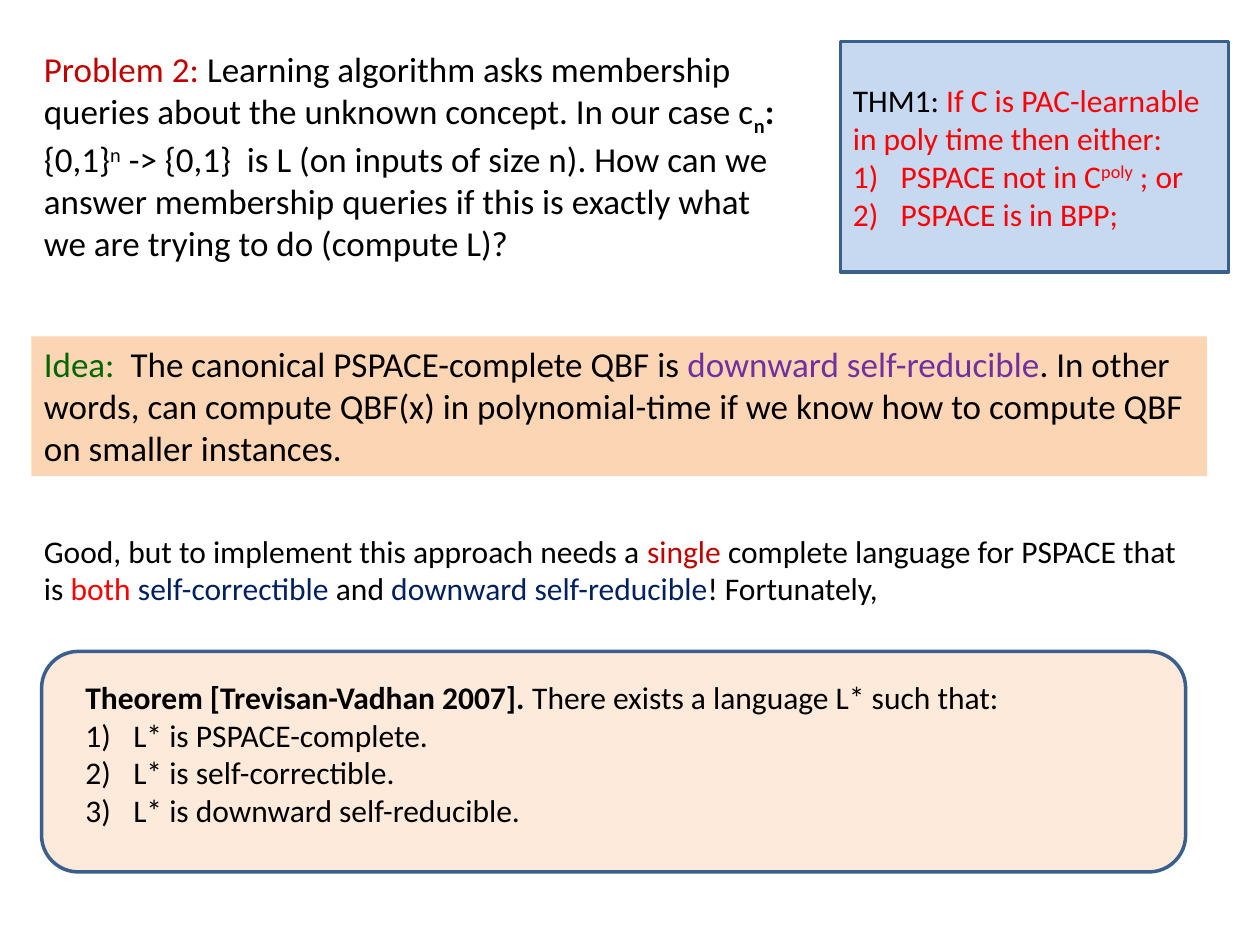
from lxml import etree
from pptx import Presentation
from pptx import util as u
from pptx.dml import color as col
from pptx.enum import shapes, text
from pptx.oxml import ns

HUES = {
    "black": "000000", "green": "006600", "purple": "7030A0", "brick": "C00000",
    "red": "FF0000", "navy": "002060", "peach": "FCD5B5", "sky": "C6D9F1",
    "cream": "FDEADA", "edge": "3A5F8C",
}
BASE = {"sub": "-25000", "sup": "30000"}


def add_box(home, kind, area, fill=None, edge=None):
    spot = [u.Inches(n) for n in area]
    if kind is None:
        return home.add_textbox(*spot)
    box = home.add_shape(kind, *spot)
    box.shadow.inherit = False
    box.fill.solid()
    box.fill.fore_color.rgb = col.RGBColor.from_string(HUES[fill])
    if edge:
        box.line.color.rgb = col.RGBColor.from_string(HUES[edge])
        box.line.width = u.Pt(2)
    else:
        box.line.fill.background()
    return box


def add_text(box, size, paras, anchor=text.MSO_ANCHOR.TOP):
    frame = box.text_frame
    frame.word_wrap = True
    frame.vertical_anchor = anchor
    for i, (listed, runs) in enumerate(paras):
        para = frame.paragraphs[0] if i == 0 else frame.add_paragraph()
        para.alignment = text.PP_ALIGN.LEFT
        if listed:
            props = para._p.get_or_add_pPr()
            props.set("marL", str(u.Inches(0.38)))
            props.set("indent", str(-u.Inches(0.38)))
            etree.SubElement(props, ns.qn("a:buFont"), typeface="+mj-lt")
            etree.SubElement(props, ns.qn("a:buAutoNum"), type="arabicParenR")
        for words, hue, *marks in runs:
            run = para.add_run()
            run.text = words
            run.font.name = "Calibri"
            run.font.size = u.Pt(size)
            run.font.bold = "bold" in marks
            run.font.color.rgb = col.RGBColor.from_string(HUES[hue])
            for mark in marks:
                if mark in BASE:
                    run.font._element.set("baseline", BASE[mark])


deck = Presentation()
deck.slide_width, deck.slide_height = u.Inches(10), u.Inches(7.5)
slide = deck.slides.add_slide(deck.slide_layouts[6])
tree = slide.shapes
RECT = shapes.MSO_SHAPE.RECTANGLE

idea = add_box(tree, RECT, (0.25, 2.67, 9.33, 1.11), "peach")
add_text(idea, 20, [(False, [
    ("Idea:  ", "green"),
    ("The canonical PSPACE-complete QBF is ", "black"),
    ("downward self-reducible", "purple"),
    (". In other words, can compute QBF(x) in polynomial-time if we know "
     "how to compute QBF on smaller instances.", "black"),
])])

problem = add_box(tree, None, (0.25, 0.33, 6, 2.12))
add_text(problem, 20, [(False, [
    ("Problem 2: ", "brick"),
    ("Learning algorithm asks membership queries about the unknown concept. "
     "In our case c", "black"),
    ("n", "black", "bold", "sub"),
    (": ", "black", "bold"),
    ("{0,1}", "black"),
    ("n", "black", "sup"),
    (" -> {0,1}  is L (on inputs of size n). How can we answer membership "
     "queries if this is exactly what we are trying to do (compute L)?", "black"),
])])

recap = add_box(tree, RECT, (6.67, 0.33, 3.08, 1.83), "sky", "edge")
add_text(recap, 18, [
    (False, [("THM1: ", "black"),
             ("If C is PAC-learnable in poly time then either:", "red")]),
    (True, [("PSPACE not in C", "red"), ("poly", "red", "sup"), (" ; or", "red")]),
    (True, [("PSPACE is in BPP;", "red")]),
], text.MSO_ANCHOR.MIDDLE)

bridge = add_box(tree, None, (0.25, 4.17, 9.25, 0.71))
add_text(bridge, 18, [(False, [
    ("Good, but to implement this approach needs a ", "black"),
    ("single ", "brick"),
    ("complete language for PSPACE that is ", "black"),
    ("both ", "red"),
    ("self-correctible", "navy"),
    (" and ", "black"),
    ("downward self-reducible", "navy"),
    ("! Fortunately,", "black"),
])])

group = tree.add_group_shape().shapes
add_box(group, shapes.MSO_SHAPE.ROUNDED_RECTANGLE, (0.33, 5.17, 9.08, 1.75), "cream", "edge")
theorem = add_box(group, None, (0.58, 5.33, 8, 1.31))
traits = ["PSPACE-complete", "self-correctible", "downward self-reducible"]
add_text(theorem, 18, [
    (False, [("Theorem [Trevisan-Vadhan 2007]. ", "black", "bold"),
             ("There exists a language L* such that:", "black")]),
    *[(True, [(f"L* is {trait}.", "black")]) for trait in traits],
])

deck.save("out.pptx")
